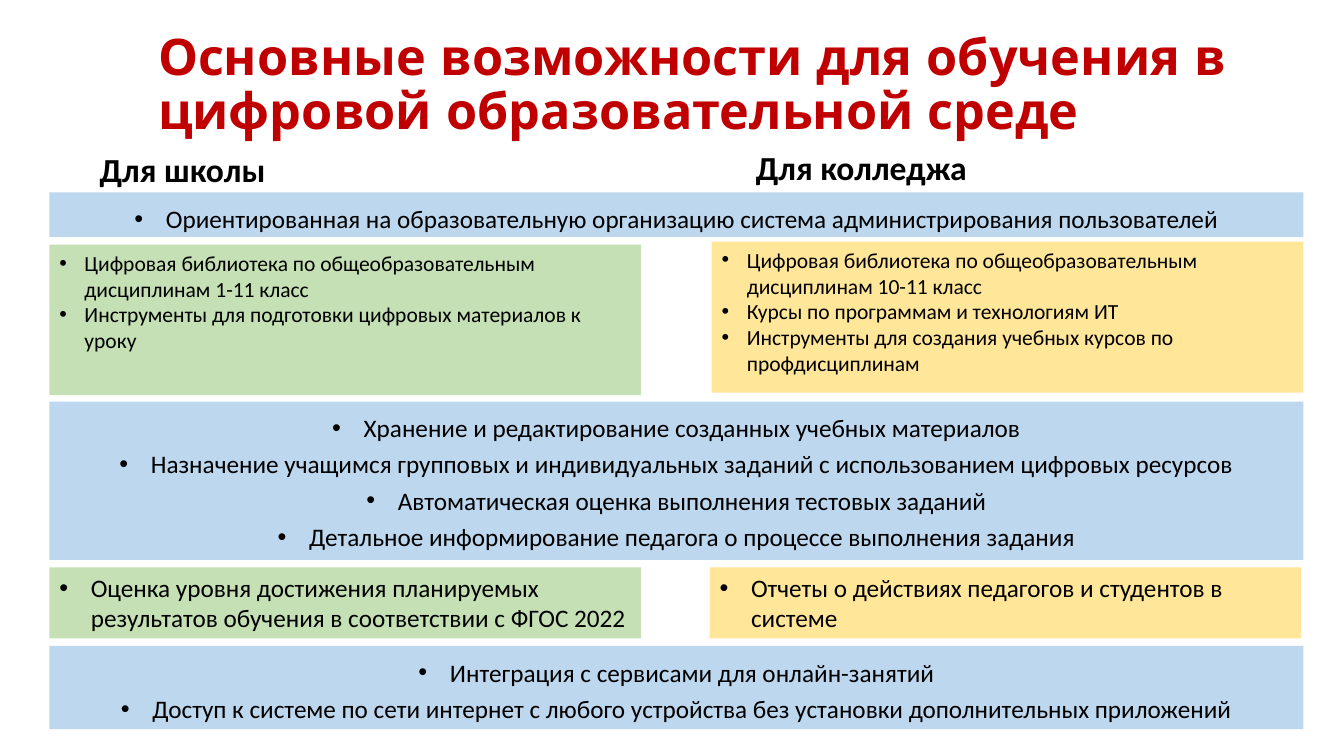
from dataclasses import dataclass

import pptx
import pptx.dml.color
import pptx.enum.shapes
import pptx.enum.text
import pptx.oxml.ns
import pptx.util
from lxml import etree

Pt = pptx.util.Pt
Align = pptx.enum.text.PP_ALIGN
Anchor = pptx.enum.text.MSO_ANCHOR


@dataclass(frozen=True)
class Theme:
    title_font: str = "Quicksand"
    body_font: str = "Calibri"
    title_color: str = "C00000"
    text_color: str = "000000"
    common: str = "BDD7EE"
    school: str = "C5E0B4"
    college: str = "FFE699"
    title_size: float = 36
    heading_size: float = 24
    body_size: float = 18
    small_size: float = 15.4


THEME = Theme()
LEFT, FULL_WIDTH, COLUMN_WIDTH = 35.3, 895.7, 422.6


@dataclass(frozen=True)
class Box:
    left: float
    top: float
    width: float
    height: float


@dataclass(frozen=True)
class Heading:
    box: Box
    text: str
    size: float = THEME.heading_size
    font: str = THEME.body_font
    color: str = THEME.text_color
    anchor: Anchor = Anchor.BOTTOM


@dataclass(frozen=True)
class Panel:
    box: Box
    fill: str
    items: tuple[str, ...]
    size: float = THEME.body_size
    indent: float = 22.5
    align: Align = Align.LEFT
    line_spacing: float = 1.0


def common_panel(top: float, height: float, *items: str) -> Panel:
    return Panel(Box(LEFT, top, FULL_WIDTH, height), THEME.common, items,
                 align=Align.CENTER, line_spacing=1.2)


HEADINGS = (
    Heading(Box(105.8, 9.4, 788.4, 104.4),
            "Основные возможности для обучения в цифровой образовательной среде",
            THEME.title_size, THEME.title_font, THEME.title_color, Anchor.MIDDLE),
    Heading(Box(64.1, 74.2, 406, 64.8), "Для школы"),
    Heading(Box(532.8, 72.7, 408.2, 64.8), "Для колледжа"),
)

PANELS = (
    common_panel(137.5, 31.7,
                 "Ориентированная на образовательную организацию система администрирования пользователей"),
    Panel(Box(LEFT, 174.8, COLUMN_WIDTH, 107.4), THEME.school,
          ("Цифровая библиотека по общеобразовательным дисциплинам 1-11 класс",
           "Инструменты для подготовки цифровых материалов к уроку"),
          size=THEME.small_size, indent=18),
    Panel(Box(508.4, 172.6, COLUMN_WIDTH, 107.8), THEME.college,
          ("Цифровая библиотека по общеобразовательным дисциплинам 10-11 класс",
           "Курсы по программам и технологиям ИТ",
           "Инструменты для создания учебных курсов по профдисциплинам"),
          size=THEME.small_size, indent=18),
    common_panel(286.8, 113.2,
                 "Хранение и редактирование созданных учебных материалов",
                 "Назначение учащимся групповых и индивидуальных заданий с использованием цифровых ресурсов",
                 "Автоматическая оценка выполнения тестовых заданий",
                 "Детальное информирование педагога о процессе выполнения задания"),
    Panel(Box(LEFT, 405.2, COLUMN_WIDTH, 50.9), THEME.school,
          ("Оценка уровня достижения планируемых результатов обучения в соответствии с ФГОС 2022",)),
    Panel(Box(506.9, 405.2, COLUMN_WIDTH, 50.9), THEME.college,
          ("Отчеты о действиях педагогов и студентов в системе",)),
    common_panel(461.4, 59.5,
                 "Интеграция с сервисами для онлайн-занятий",
                 "Доступ к системе по сети интернет с любого устройства без установки дополнительных приложений"),
)


def rgb(color: str) -> pptx.dml.color.RGBColor:
    return pptx.dml.color.RGBColor.from_string(color)


def place(box: Box) -> tuple:
    return Pt(box.left), Pt(box.top), Pt(box.width), Pt(box.height)


def write(frame, *texts: str, size: float, font: str = THEME.body_font,
          color: str = THEME.text_color, bold: bool = False,
          align: Align = Align.LEFT, anchor: Anchor = Anchor.TOP,
          line_spacing: float = 1.0, indent: float = 0) -> None:
    frame.word_wrap = True
    frame.vertical_anchor = anchor
    for index, text in enumerate(texts):
        paragraph = frame.add_paragraph() if index else frame.paragraphs[0]
        paragraph.alignment = align
        paragraph.line_spacing = line_spacing
        if indent:
            add_bullet(paragraph, indent)
        run = paragraph.add_run()
        run.text = text
        run.font.name = font
        run.font.size = Pt(size)
        run.font.bold = bold
        run.font.color.rgb = rgb(color)


def add_bullet(paragraph, indent: float) -> None:
    properties = paragraph._p.get_or_add_pPr()
    properties.set("marL", str(Pt(indent)))
    properties.set("indent", str(-Pt(indent)))
    qn = pptx.oxml.ns.qn
    etree.SubElement(properties, qn("a:buFont")).set("typeface", "Arial")
    etree.SubElement(properties, qn("a:buChar")).set("char", "•")


def draw_heading(slide, heading: Heading) -> None:
    textbox = slide.shapes.add_textbox(*place(heading.box))
    write(textbox.text_frame, heading.text, size=heading.size, font=heading.font,
          color=heading.color, bold=True, anchor=heading.anchor, line_spacing=0.9)


def draw_panel(slide, panel: Panel) -> None:
    rectangle = slide.shapes.add_shape(
        pptx.enum.shapes.MSO_SHAPE.RECTANGLE, *place(panel.box))
    rectangle.shadow.inherit = False
    rectangle.fill.solid()
    rectangle.fill.fore_color.rgb = rgb(panel.fill)
    rectangle.line.fill.background()
    write(rectangle.text_frame, *panel.items, size=panel.size, align=panel.align,
          line_spacing=panel.line_spacing, indent=panel.indent)


def main() -> None:
    presentation = pptx.Presentation()
    presentation.slide_width, presentation.slide_height = Pt(960), Pt(540)
    slide = presentation.slides.add_slide(presentation.slide_layouts[6])
    for heading in HEADINGS:
        draw_heading(slide, heading)
    for panel in PANELS:
        draw_panel(slide, panel)
    presentation.save("out.pptx")


if __name__ == "__main__":
    main()
